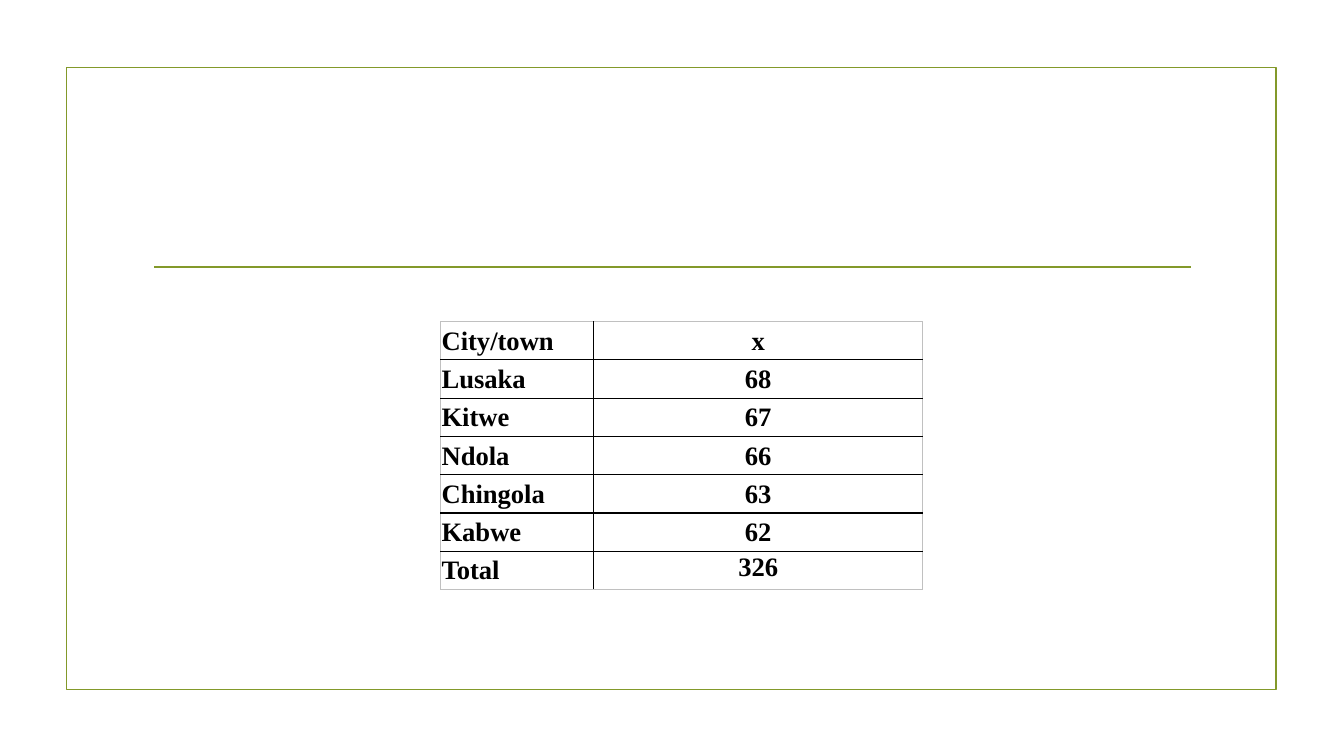
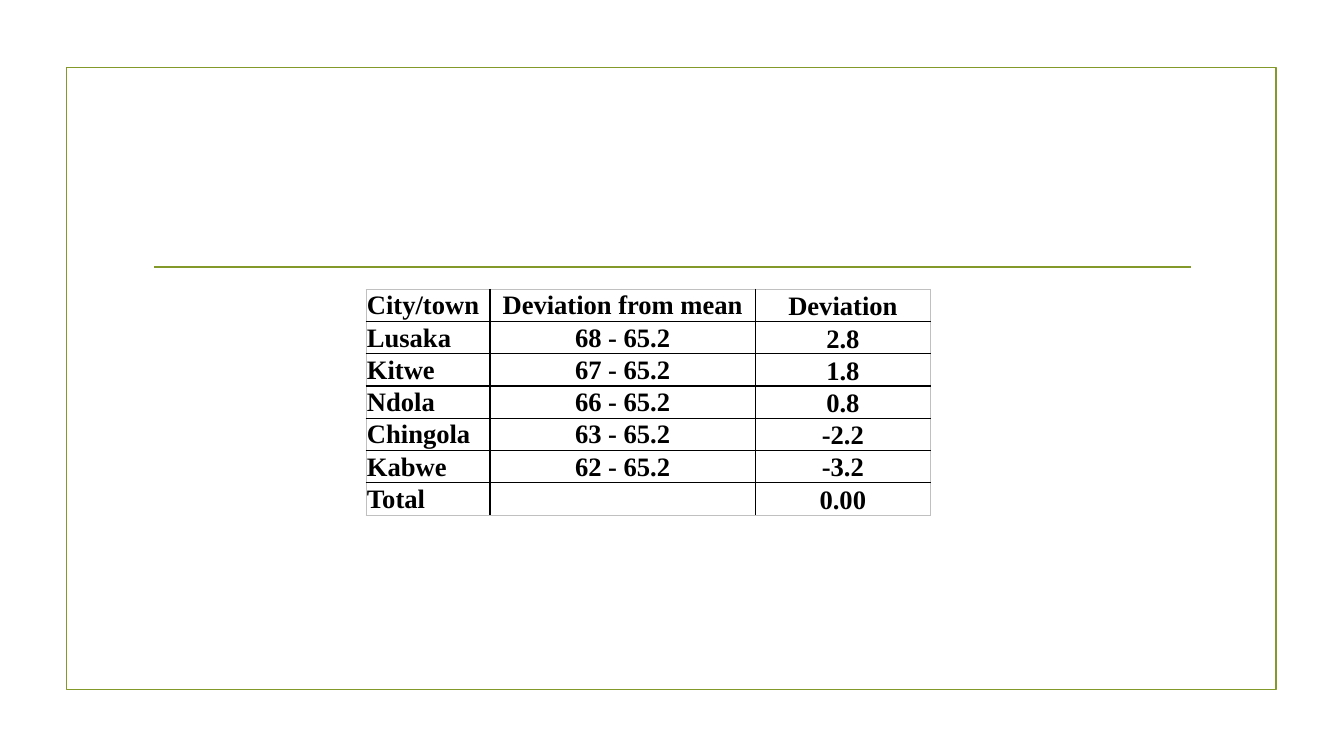
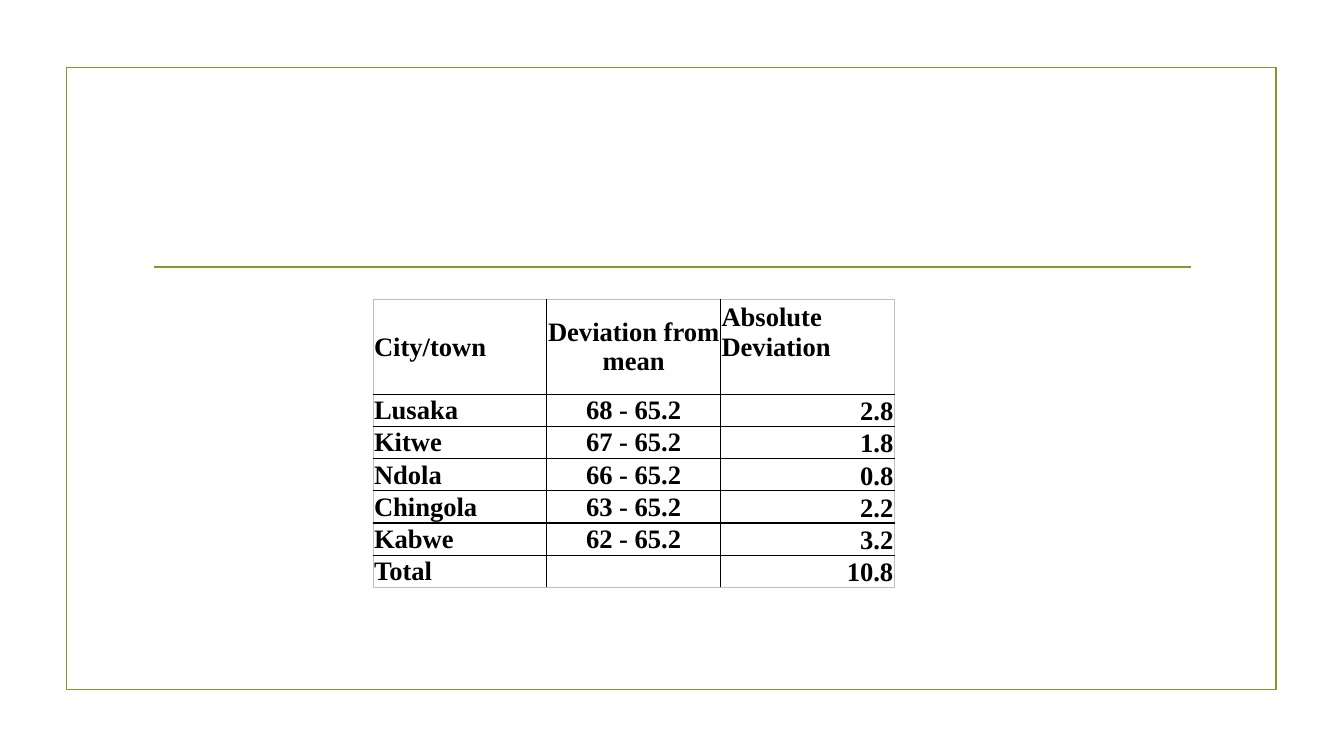
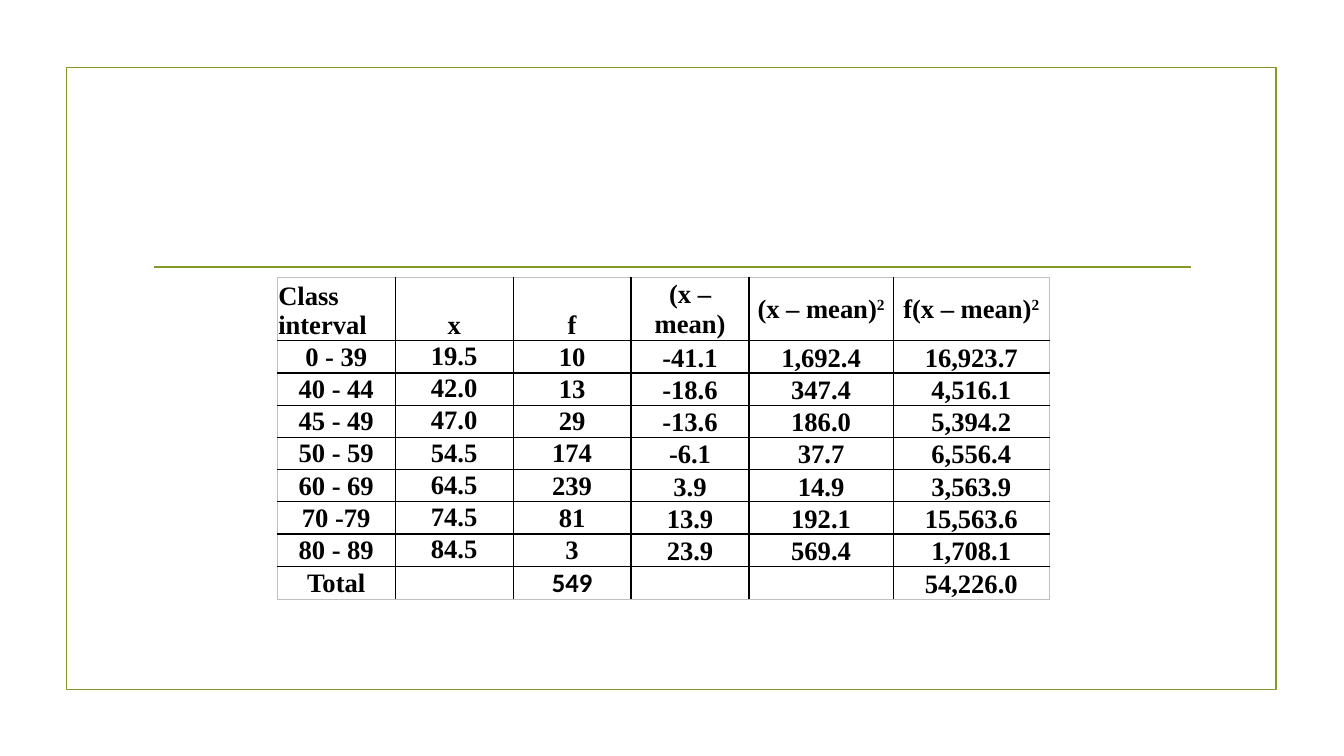
from lxml import etree
from pptx import Presentation
from pptx.dml.color import RGBColor
from pptx.enum.shapes import MSO_CONNECTOR, MSO_SHAPE
from pptx.enum.text import MSO_ANCHOR, PP_ALIGN
from pptx.oxml.ns import qn
from pptx.util import Inches, Pt

LEFT, CENTER, RIGHT = PP_ALIGN.LEFT, PP_ALIGN.CENTER, PP_ALIGN.RIGHT
TOP, MIDDLE, BOTTOM = MSO_ANCHOR.TOP, MSO_ANCHOR.MIDDLE, MSO_ANCHOR.BOTTOM
RECTANGLE, STRAIGHT = MSO_SHAPE.RECTANGLE, MSO_CONNECTOR.STRAIGHT

OLIVE = RGBColor(0x83, 0x99, 0x2A)
BLACK = RGBColor(0x00, 0x00, 0x00)
EDGE_GREY = RGBColor(0xC0, 0xC0, 0xC0)
RULE_WIDTH = Pt(1.25)
GRID_WIDTH, EDGE_WIDTH = Pt(1), Pt(0.5)
SERIF, SANS = "Times New Roman", "Calibri"

TABLES = [
    {
        "position": (4.37, 3.19),
        "columns": [(1.52, LEFT, MIDDLE), (3.26, CENTER, MIDDLE)],
        "header_height": 0.38,
        "row_height": 0.38,
        "rows": [
            ("City/town", "x"),
            ("Lusaka", "68"),
            ("Kitwe", "67"),
            ("Ndola", "66"),
            ("Chingola", "63"),
            ("Kabwe", "62"),
            ("Total", "326"),
        ],
        "exceptions": {(6, 1): {"anchor": TOP}},
    },
    {
        "position": (3.63, 2.87),
        "columns": [(1.23, LEFT, MIDDLE), (2.63, CENTER, MIDDLE), (1.74, CENTER, BOTTOM)],
        "header_height": 0.32,
        "row_height": 0.32,
        "rows": [
            ("City/town", "Deviation from mean", "Deviation"),
            ("Lusaka", "68 - 65.2", "2.8"),
            ("Kitwe", "67 - 65.2", "1.8"),
            ("Ndola", "66 - 65.2", "0.8"),
            ("Chingola", "63 - 65.2", "-2.2"),
            ("Kabwe", "62 - 65.2", "-3.2"),
            ("Total", "", "0.00"),
        ],
        "exceptions": {},
    },
    {
        "position": (3.7, 2.97),
        "columns": [(5.17 / 3, LEFT, MIDDLE), (5.17 / 3, CENTER, MIDDLE), (5.17 / 3, RIGHT, BOTTOM)],
        "header_height": 0.94,
        "row_height": 0.32,
        "rows": [
            ("City/town", "Deviation from mean", "Absolute Deviation"),
            ("Lusaka", "68 - 65.2", "2.8"),
            ("Kitwe", "67 - 65.2", "1.8"),
            ("Ndola", "66 - 65.2", "0.8"),
            ("Chingola", "63 - 65.2", "2.2"),
            ("Kabwe", "62 - 65.2", "3.2"),
            ("Total", "", "10.8"),
        ],
        "exceptions": {(0, 2): {"align": LEFT, "bottom": 0.32}},
    },
    {
        "position": (2.75, 2.75),
        "columns": [
            (1.17, CENTER, MIDDLE),
            (1.17, CENTER, TOP),
            (1.17, CENTER, MIDDLE),
            (1.17, CENTER, BOTTOM),
            (1.43, CENTER, BOTTOM),
            (1.55, CENTER, BOTTOM),
        ],
        "header_height": 0.63,
        "row_height": 0.32,
        "rows": [
            ("Class interval", "x", "f", "(x – mean)", "(x – mean)^2", "f(x – mean)^2"),
            ("0 - 39", "19.5", "10", "-41.1", "1,692.4", "16,923.7"),
            ("40 - 44", "42.0", "13", "-18.6", "347.4", "4,516.1"),
            ("45 - 49", "47.0", "29", "-13.6", "186.0", "5,394.2"),
            ("50 - 59", "54.5", "174", "-6.1", "37.7", "6,556.4"),
            ("60 - 69", "64.5", "239", "3.9", "14.9", "3,563.9"),
            ("70 -79", "74.5", "81", "13.9", "192.1", "15,563.6"),
            ("80 - 89", "84.5", "3", "23.9", "569.4", "1,708.1"),
            ("Total", "", "549", "", "", "54,226.0"),
        ],
        "exceptions": {
            (0, 0): {"align": LEFT, "anchor": BOTTOM},
            (0, 1): {"anchor": BOTTOM},
            (0, 2): {"anchor": BOTTOM},
            (0, 3): {"anchor": MIDDLE},
            (0, 4): {"anchor": MIDDLE},
            (0, 5): {"anchor": MIDDLE},
            (8, 2): {"anchor": BOTTOM, "font": SANS},
        },
    },
]


def write_text(cell, text, align=LEFT, anchor=MIDDLE, font=SERIF, size=19, bottom=0):
    cell.margin_left = cell.margin_right = cell.margin_top = Inches(0.01)
    cell.margin_bottom = Inches(bottom)
    cell.vertical_anchor = anchor
    paragraph = cell.text_frame.paragraphs[0]
    paragraph.alignment = align
    base, _, superscript = text.partition("^")
    for part, baseline in ((base, None), (superscript, "30000")):
        if not part:
            continue
        run = paragraph.add_run()
        run.text = part
        run.font.name = font
        run.font.size = Pt(size)
        run.font.bold = True
        run.font.color.rgb = BLACK
        if baseline:
            run._r.get_or_add_rPr().set("baseline", baseline)


def draw_borders(cell, outer_sides):
    cell_properties = cell._tc.get_or_add_tcPr()
    for index, (side, outer) in enumerate(outer_sides.items()):
        border = etree.Element(qn(f"a:ln{side}"), w=str(EDGE_WIDTH if outer else GRID_WIDTH))
        fill = etree.SubElement(border, qn("a:solidFill"))
        etree.SubElement(fill, qn("a:srgbClr"), val=str(EDGE_GREY if outer else BLACK))
        cell_properties.insert(index, border)


def add_frame(slide):
    frame = slide.shapes.add_shape(RECTANGLE, Inches(0.66), Inches(0.67), Inches(12), Inches(6.17))
    frame.shadow.inherit = False
    frame.fill.background()
    rule = slide.shapes.add_connector(STRAIGHT, Inches(1.53), Inches(2.65), Inches(11.81), Inches(2.65))
    etree.SubElement(rule._element.spPr, qn("a:effectLst"))
    for outline in (frame.line, rule.line):
        outline.color.rgb = OLIVE
        outline.width = RULE_WIDTH


def add_data_table(slide, content):
    rows, columns = content["rows"], content["columns"]
    last_row, last_column = len(rows) - 1, len(columns) - 1
    left, top = content["position"]
    heights = [content["header_height"]] + [content["row_height"]] * last_row
    width = sum(column[0] for column in columns)
    table = slide.shapes.add_table(
        len(rows), len(columns), Inches(left), Inches(top), Inches(width), Inches(sum(heights))
    ).table
    table.first_row = table.horz_banding = False
    for column, (column_width, _, _) in zip(table.columns, columns):
        column.width = Inches(column_width)
    for row, height in zip(table.rows, heights):
        row.height = Inches(height)
    for r, values in enumerate(rows):
        for c, (text, (_, align, anchor)) in enumerate(zip(values, columns)):
            cell = table.cell(r, c)
            cell.fill.background()
            text_format = {"align": align, "anchor": anchor, **content["exceptions"].get((r, c), {})}
            write_text(cell, text, **text_format)
            draw_borders(cell, {"L": c == 0, "R": c == last_column, "T": r == 0, "B": r == last_row})


def main():
    deck = Presentation()
    deck.slide_width, deck.slide_height = Inches(13.33), Inches(7.5)
    blank_layout = deck.slide_layouts[6]
    for content in TABLES:
        slide = deck.slides.add_slide(blank_layout)
        add_frame(slide)
        add_data_table(slide, content)
    deck.save("out.pptx")


if __name__ == "__main__":
    main()
